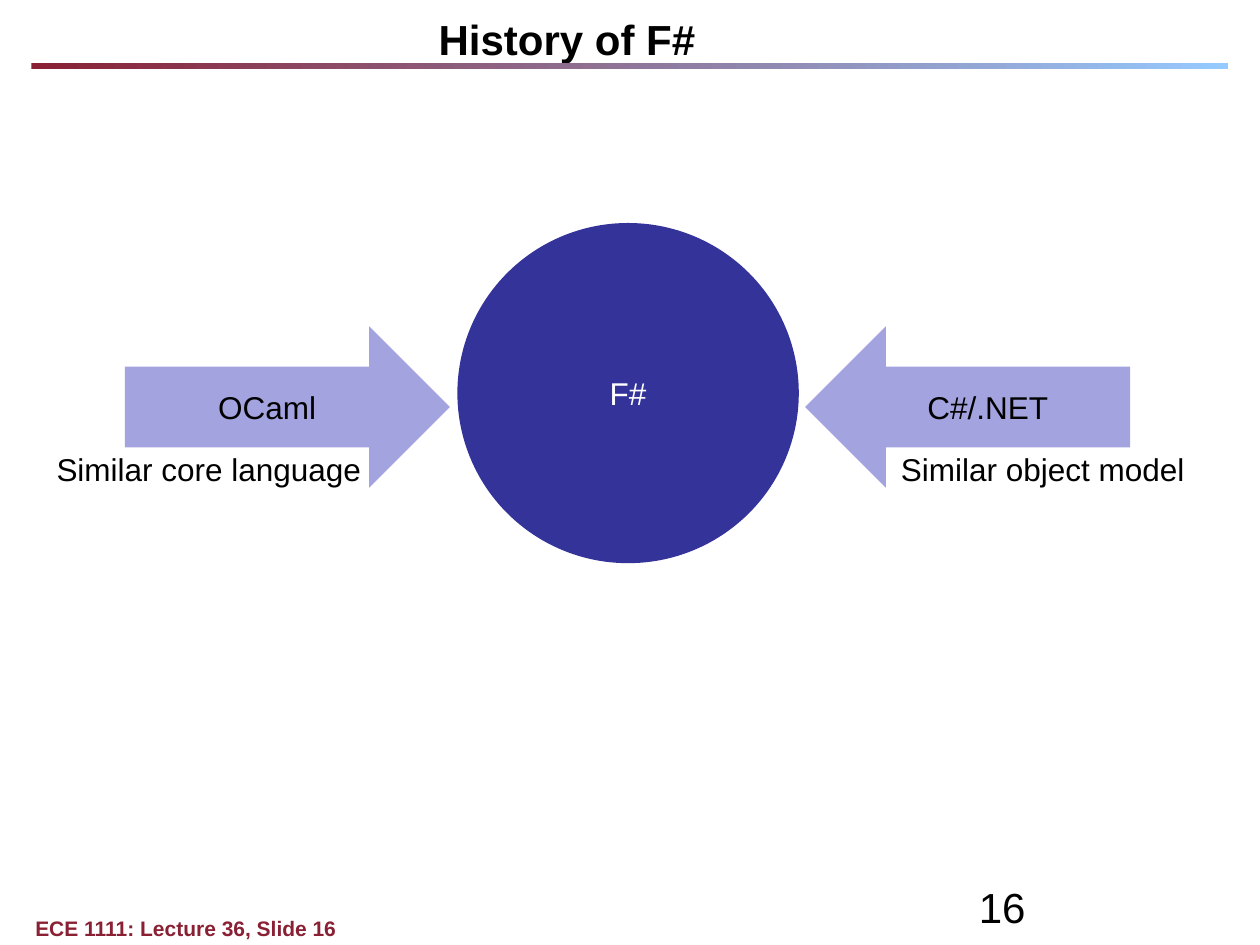
from pptx import Presentation
from pptx.dml.color import RGBColor
from pptx.enum.shapes import MSO_SHAPE
from pptx.enum.text import MSO_ANCHOR, MSO_AUTO_SIZE, PP_ALIGN
from pptx.util import Inches, Pt

LEFT, CENTER, RIGHT = PP_ALIGN.LEFT, PP_ALIGN.CENTER, PP_ALIGN.RIGHT
TOP, MIDDLE = MSO_ANCHOR.TOP, MSO_ANCHOR.MIDDLE
ELLIPSE, RECTANGLE = MSO_SHAPE.OVAL, MSO_SHAPE.RECTANGLE
RIGHT_ARROW, LEFT_ARROW = MSO_SHAPE.RIGHT_ARROW, MSO_SHAPE.LEFT_ARROW

BLACK = RGBColor(0x00, 0x00, 0x00)
WHITE = RGBColor(0xFF, 0xFF, 0xFF)
MAROON = RGBColor(0x89, 0x20, 0x34)
SKY = RGBColor(0x95, 0xCA, 0xFF)
INDIGO = RGBColor(0x33, 0x33, 0x99)
LAVENDER = RGBColor(0xA3, 0xA3, 0xE0)

# Content
TITLE = "History of F#"
FOOTER = "ECE 1111: Lecture 36, Slide 16"
PAGE_NUMBER = "16"
LANGUAGE = "F#"
# influence, arrow, arrow left, what is similar, label left, label alignment
INFLUENCES = [
    ("OCaml", RIGHT_ARROW, 0.99, "Similar core language", 0.35, LEFT),
    ("C#/.NET", LEFT_ARROW, 6.39, "Similar object model", 6.81, RIGHT),
]


def write(shape, text, size, color=BLACK, align=LEFT, bold=False,
          anchor=TOP, insets=(0.1, 0.05)):
    frame = shape.text_frame
    frame.text = text
    frame.word_wrap = True
    frame.auto_size = MSO_AUTO_SIZE.NONE
    frame.vertical_anchor = anchor
    frame.margin_left = frame.margin_right = Inches(insets[0])
    frame.margin_top = frame.margin_bottom = Inches(insets[1])
    paragraph = frame.paragraphs[0]
    paragraph.alignment = align
    font = paragraph.font
    font.name, font.size, font.bold = "Arial", Pt(size), bold
    font.color.rgb = color


def add_text(slide, box, text, size, **style):
    write(slide.shapes.add_textbox(*map(Inches, box)), text, size, **style)


def add_shape(slide, kind, box, color=None):
    shape = slide.shapes.add_shape(kind, *map(Inches, box))
    shape.shadow.inherit = False
    shape.line.fill.background()
    if color is not None:
        shape.fill.solid()
        shape.fill.fore_color.rgb = color
    return shape


def main():
    deck = Presentation()
    deck.slide_width, deck.slide_height = Inches(10), Inches(7.5)
    slide = deck.slides.add_slide(deck.slide_layouts[5])

    # Gradient rule under the title
    rule = add_shape(slide, RECTANGLE, (0.25, 0.5, 9.5, 0.05))
    rule.fill.gradient()
    rule.fill.gradient_angle = 0
    for stop, position, color in zip(rule.fill.gradient_stops, (0, 1), (MAROON, SKY)):
        stop.position = position
        stop.color.rgb = color

    # Title
    title = slide.shapes.title
    title.left, title.top, title.width, title.height = map(Inches, (0, 0.06, 9, 0.4))
    write(title, TITLE, 24, align=CENTER, bold=True)

    # Footer and page number
    add_text(slide, (0.28, 7.27, 8.92, 0.2), FOOTER, 12,
             color=MAROON, bold=True, insets=(0, 0))
    add_text(slide, (7.67, 6.95, 2.33, 0.4), PAGE_NUMBER, 24)

    # Language in the middle
    circle = add_shape(slide, ELLIPSE, (3.63, 1.77, 2.71, 2.7), INDIGO)
    write(circle, LANGUAGE, 18, color=WHITE, align=CENTER, anchor=MIDDLE,
          insets=(0, 0.05))

    # Influences pointing at it, each with a label
    for influence, kind, arrow_left, similarity, label_left, align in INFLUENCES:
        arrow = add_shape(slide, kind, (arrow_left, 2.59, 2.58, 1.28), LAVENDER)
        write(arrow, influence, 18, align=CENTER, anchor=MIDDLE, insets=(0.07, 0.04))
        add_text(slide, (label_left, 3.52, 2.69, 0.4), similarity, 18, align=align)

    deck.save("out.pptx")


if __name__ == "__main__":
    main()
